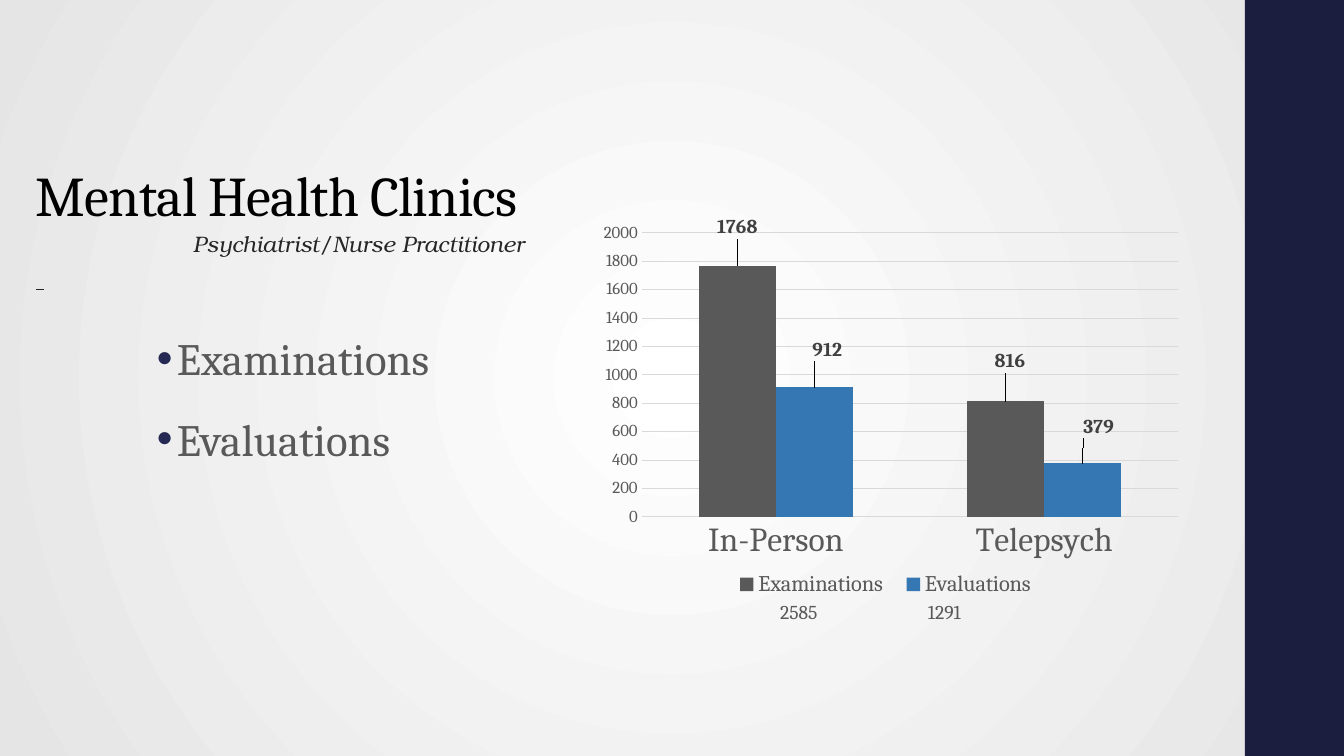
from dataclasses import dataclass

from lxml.etree import SubElement
from pptx import Presentation
from pptx.chart.data import CategoryChartData
from pptx.dml.color import RGBColor
from pptx.enum.chart import XL_CHART_TYPE, XL_LABEL_POSITION, XL_LEGEND_POSITION, XL_TICK_MARK
from pptx.enum.shapes import MSO_SHAPE
from pptx.enum.text import MSO_ANCHOR, MSO_AUTO_SIZE
from pptx.oxml import parse_xml
from pptx.oxml.ns import nsdecls, qn
from pptx.util import Emu, Pt

COLORS = {
    "white": "FFFFFF", "edge": "E5E5E5", "navy": "1B1E3E", "bullet": "242852",
    "black": "000000", "dark": "262626", "label": "404040", "gray": "595959",
    "blue": "3477B2", "grid": "D9D9D9",
}
CHART_BOX = (592, 216, 599, 394)


@dataclass
class Line:
    text: str
    size: int
    color: str
    face: str = "Cambria"
    italic: bool = False
    underline: bool = False
    tracking: int = 0
    spacing: float = 1.07
    after: int = 0
    left: int = 0
    bullet: bool = False


@dataclass
class Series:
    name: str
    color: str
    values: tuple[int, ...]
    label_shifts: tuple[tuple[int, int], ...]


LINES = [
    Line("Mental Health Clinics", 40, "black", tracking=-50),
    Line("Psychiatrist/Nurse Practitioner", 16, "dark", "TeX Gyre Bonum", italic=True,
         tracking=10, left=157),
    Line(" ", 20, "dark", "TeX Gyre Bonum", italic=True, underline=True, tracking=10, after=8),
    Line("Examinations", 32, "gray", spacing=1.5, left=141, bullet=True),
    Line("Evaluations", 32, "gray", spacing=1.5, left=141, bullet=True),
]
SERIES = [
    Series("Examinations", "gray", (1768, 816), ((0, -23), (4, -24))),
    Series("Evaluations", "blue", (912, 379), ((13, -22), (16, -21))),
]


def px(n: int) -> Emu:
    return Emu(round(n * 914400 / 100.8))


def rgb(name: str) -> RGBColor:
    return RGBColor.from_string(COLORS[name])


def set_font(font, size: int, color: str, **extra) -> None:
    for key, value in {"name": "Cambria", "size": Pt(size), **extra}.items():
        setattr(font, key, value)
    font.color.rgb = rgb(color)


def set_frame(tf, top: int) -> None:
    values = {"word_wrap": True, "auto_size": MSO_AUTO_SIZE.NONE,
              "vertical_anchor": MSO_ANCHOR.TOP, "margin_top": px(top),
              "margin_left": px(10), "margin_right": px(10)}
    for key, value in values.items():
        setattr(tf, key, value)


def manual_layout(**values):
    items = "".join(f'<c:{key} val="{value}"/>' for key, value in values.items())
    return parse_xml(f'<c:layout {nsdecls("c")}><c:manualLayout>{items}'
                     '</c:manualLayout></c:layout>')


def fraction(length: int, whole: int) -> float:
    return round(length / whole, 3)


def draw_background(s) -> None:
    fill = s.background.fill
    fill.gradient()
    for stop, color, position in zip(fill.gradient_stops, ("white", "edge"), (0, 1)):
        stop.color.rgb = rgb(color)
        stop.position = position
    grad = s.element.find(".//" + qn("a:gradFill"))
    grad.replace(grad.find(qn("a:lin")), parse_xml(
        f'<a:path {nsdecls("a")} path="circle">'
        '<a:fillToRect l="50000" t="50000" r="50000" b="50000"/></a:path>'))


def draw_sidebar(s) -> None:
    sp = s.shapes.add_shape(MSO_SHAPE.RECTANGLE, px(1245), 0, px(99), px(756))
    sp.shadow.inherit = False
    sp.fill.solid()
    sp.fill.fore_color.rgb = rgb("navy")
    sp.line.fill.background()


def write_line(p, line: Line) -> None:
    p.line_spacing = line.spacing
    p.space_before, p.space_after = Pt(0), Pt(line.after)
    p.level = 4 if line.bullet else 0
    pr = p._p.get_or_add_pPr()
    pr.set("marL", str(px(line.left)))
    pr.set("indent", str(px(-20 if line.bullet else 0)))
    if line.bullet:
        SubElement(SubElement(pr, qn("a:buClr")), qn("a:srgbClr"), val=COLORS["bullet"])
        SubElement(pr, qn("a:buFont"), typeface="Arial")
        SubElement(pr, qn("a:buChar"), char="•")
    else:
        SubElement(pr, qn("a:buNone"))
    r = p.add_run()
    r.text = line.text
    set_font(r.font, line.size, line.color, name=line.face,
             italic=line.italic, underline=line.underline)
    r._r.get_or_add_rPr().set("spc", str(line.tracking))


def draw_body(s) -> None:
    title, body = s.placeholders
    title.element.getparent().remove(title.element)
    body.left, body.top, body.width, body.height = (px(n) for n in (26, 148, 755, 461))
    tf = body.text_frame
    set_frame(tf, 8)
    for i, line in enumerate(LINES):
        write_line(tf.add_paragraph() if i else tf.paragraphs[0], line)


def draw_chart(s) -> None:
    _, _, width, height = CHART_BOX
    data = CategoryChartData()
    data.categories = ["In-Person", "Telepsych"]
    for item in SERIES:
        data.add_series(item.name, item.values)
    chart = s.shapes.add_chart(XL_CHART_TYPE.COLUMN_CLUSTERED,
                               *(px(n) for n in CHART_BOX), data).chart
    set_font(chart.font, 10, "black")
    chart.has_title = False
    chart.has_legend = True
    legend = chart.legend
    legend.position = XL_LEGEND_POSITION.BOTTOM
    legend.include_in_layout = False
    set_font(legend.font, 16, "gray")
    legend._element.find(qn("c:legendPos")).addnext(manual_layout(
        xMode="edge", yMode="edge", x=0.22, y=0.89, w=0.54, h=0.09))

    for axis, size in ((chart.category_axis, 24), (chart.value_axis, 12)):
        axis.major_tick_mark = axis.minor_tick_mark = XL_TICK_MARK.NONE
        axis.format.line.fill.background()
        set_font(axis.tick_labels.font, size, "gray")
    axis = chart.value_axis
    axis.minimum_scale, axis.maximum_scale, axis.major_unit = 0, 2000, 200
    axis.has_major_gridlines = True
    axis.major_gridlines.format.line.color.rgb = rgb("grid")
    axis.major_gridlines.format.line.width = Pt(0.75)

    plot = chart.plots[0]
    plot.gap_width, plot.overlap, plot.vary_by_categories = 150, 0, False
    for series, item in zip(plot.series, SERIES):
        series.format.fill.solid()
        series.format.fill.fore_color.rgb = rgb(item.color)
        for i, (dx, dy) in enumerate(item.label_shifts):
            label = series.points[i].data_label
            set_font(label.font, 14, "label", bold=True)
            label.position = XL_LABEL_POSITION.OUTSIDE_END
            index = series._element.findall(".//" + qn("c:dLbl"))[i].find(qn("c:idx"))
            index.addnext(manual_layout(x=fraction(dx, width), y=fraction(dy, height)))

    area = chart._chartSpace.find(".//" + qn("c:plotArea"))
    for old in area.findall(qn("c:layout")):
        area.remove(old)
    area.insert(0, manual_layout(
        layoutTarget="inner", xMode="edge", yMode="edge",
        x=fraction(50, width), y=fraction(17, height),
        w=fraction(537, width), h=fraction(284, height)))


def draw_totals(s) -> None:
    tf = s.shapes.add_textbox(px(759), px(590), px(283), px(40)).text_frame
    set_frame(tf, 10)
    p = tf.paragraphs[0]
    pr = p._p.get_or_add_pPr()
    pr.set("marL", str(px(11)))
    SubElement(SubElement(pr, qn("a:tabLst")), qn("a:tab"), pos=str(px(148)), algn="l")
    r = p.add_run()
    r.text = "\t".join(str(sum(item.values) + extra) for item, extra in zip(SERIES, (1, 0)))
    set_font(r.font, 14, "gray")


def main() -> None:
    prs = Presentation()
    prs.slide_width, prs.slide_height = px(1344), px(756)
    s = prs.slides.add_slide(prs.slide_layouts[1])
    draw_background(s)
    draw_sidebar(s)
    draw_body(s)
    draw_chart(s)
    draw_totals(s)
    prs.save("out.pptx")


if __name__ == "__main__":
    main()
